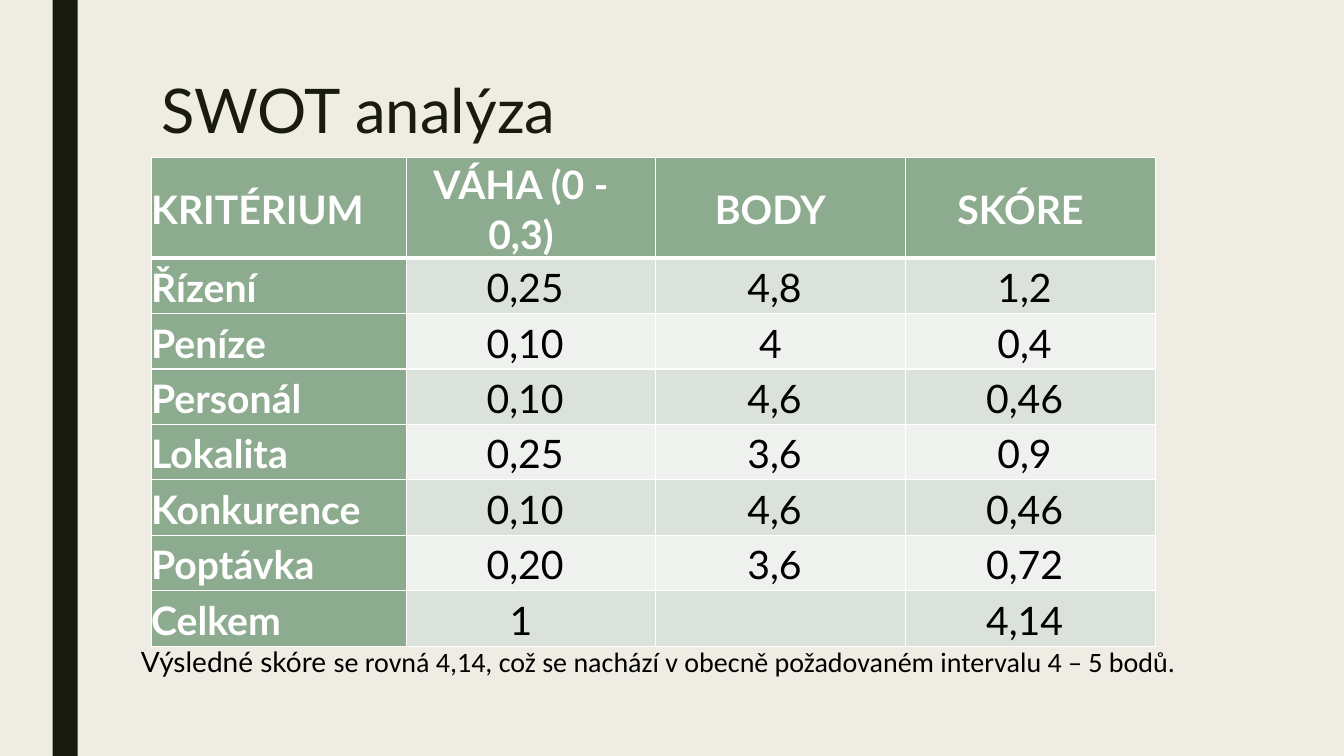
from lxml.etree import SubElement
from pptx import Presentation
from pptx.dml.color import RGBColor
from pptx.enum.shapes import MSO_SHAPE
from pptx.enum.text import MSO_ANCHOR, PP_ALIGN
from pptx.oxml.ns import qn
from pptx.util import Pt

DARK, GREEN, WHITE, BLACK = "191B0E", "8DAB8E", "FFFFFF", "000000"
BANDS = ("DBE2DB", "EEF1EE")
HEADER = ("KRITÉRIUM", "VÁHA (0 - 0,3)", "BODY", "SKÓRE")
CRITERIA = (
    ("Řízení", "0,25", "4,8", "1,2"),
    ("Peníze", "0,10", "4", "0,4"),
    ("Personál", "0,10", "4,6", "0,46"),
    ("Lokalita", "0,25", "3,6", "0,9"),
    ("Konkurence", "0,10", "4,6", "0,46"),
    ("Poptávka", "0,20", "3,6", "0,72"),
    ("Celkem", "1", "", "4,14"),
)
COLUMN_WIDTHS = (182.2, 177.8, 178.6, 178.6)
HEADER_HEIGHT, ROW_HEIGHT = 64, 39.6


def color(value):
    return RGBColor.from_string(value)


def add_text(paragraph, text, size=20, font="Lato", fill=BLACK, bold=False,
             align=PP_ALIGN.LEFT, spacing=None, after=None):
    paragraph.alignment = align
    if spacing:
        paragraph.line_spacing = spacing
    if after:
        paragraph.space_after = Pt(after)
    run = paragraph.add_run()
    run.text = text
    run.font.size = Pt(size)
    run.font.name = font
    run.font.bold = bold
    run.font.color.rgb = color(fill)


def add_text_box(slide, left, top, width, height):
    frame = slide.shapes.add_textbox(Pt(left), Pt(top), Pt(width), Pt(height)).text_frame
    frame.word_wrap = True
    return frame.paragraphs[0]


def add_side_bar(slide, left, top, width, height):
    shape = slide.shapes.add_shape(MSO_SHAPE.RECTANGLE, Pt(left), Pt(top), Pt(width), Pt(height))
    shape.shadow.inherit = False
    shape.fill.solid()
    shape.fill.fore_color.rgb = color(DARK)
    shape.line.fill.background()


def add_title(slide, left, top, width, height):
    paragraph = add_text_box(slide, left, top, width, height)
    add_text(paragraph, "SWOT analýza", size=44, fill=DARK, spacing=0.89)


def add_note(slide, left, top, width, height):
    paragraph = add_text_box(slide, left, top, width, height)
    add_text(paragraph, "Výsledné skóre ")
    add_text(paragraph, "se rovná 4,14, což se nachází v obecně požadovaném intervalu 4 – 5 bodů.",
             font="Calibri")


def set_borders(cell, **widths):
    properties = cell._tc.get_or_add_tcPr()
    for side in ("L", "R", "T", "B"):
        line = SubElement(properties, qn(f"a:ln{side}"), w=str(Pt(widths.get(side, 1))))
        SubElement(SubElement(line, qn("a:solidFill")), qn("a:srgbClr"), val=WHITE)


def format_cell(cell, text, row, column):
    is_header = row == 0
    is_label = is_header or column == 0
    set_borders(cell, T=3 if row == 1 else 1, B=3 if is_header else 1)
    cell.fill.solid()
    cell.fill.fore_color.rgb = color(GREEN if is_label else BANDS[(row - 1) % 2])
    cell.vertical_anchor = MSO_ANCHOR.MIDDLE
    cell.margin_left = cell.margin_top = cell.margin_bottom = 0
    wide_gap = is_header or len(text) == 1
    cell.margin_right = Pt(0 if column == 0 else 14 if wide_gap else 8)
    if text:
        add_text(cell.text_frame.paragraphs[0], text, size=28, bold=is_label,
                 fill=WHITE if is_label else BLACK, spacing=1.07, after=8,
                 align=PP_ALIGN.CENTER if column else PP_ALIGN.LEFT)


def add_score_table(slide, left, top):
    rows = (HEADER, *CRITERIA)
    height = HEADER_HEIGHT + ROW_HEIGHT * len(CRITERIA)
    table = slide.shapes.add_table(len(rows), len(HEADER), Pt(left), Pt(top),
                                   Pt(sum(COLUMN_WIDTHS)), Pt(height)).table
    for column, width in zip(table.columns, COLUMN_WIDTHS):
        column.width = Pt(width)
    for row_index, texts in enumerate(rows):
        table.rows[row_index].height = Pt(ROW_HEIGHT if row_index else HEADER_HEIGHT)
        for column_index, text in enumerate(texts):
            format_cell(table.cell(row_index, column_index), text, row_index, column_index)


def main():
    presentation = Presentation()
    presentation.slide_width, presentation.slide_height = Pt(960), Pt(540)
    slide = presentation.slides.add_slide(presentation.slide_layouts[6])
    slide.background.fill.solid()
    slide.background.fill.fore_color.rgb = color("EFEDE3")
    add_side_bar(slide, 37.5, 0, 18, 540)
    add_title(slide, 108, 54, 756, 116.6)
    add_score_table(slide, 108, 112.4)
    add_note(slide, 93.6, 456.5, 756, 31.5)
    presentation.save("out.pptx")


if __name__ == "__main__":
    main()
